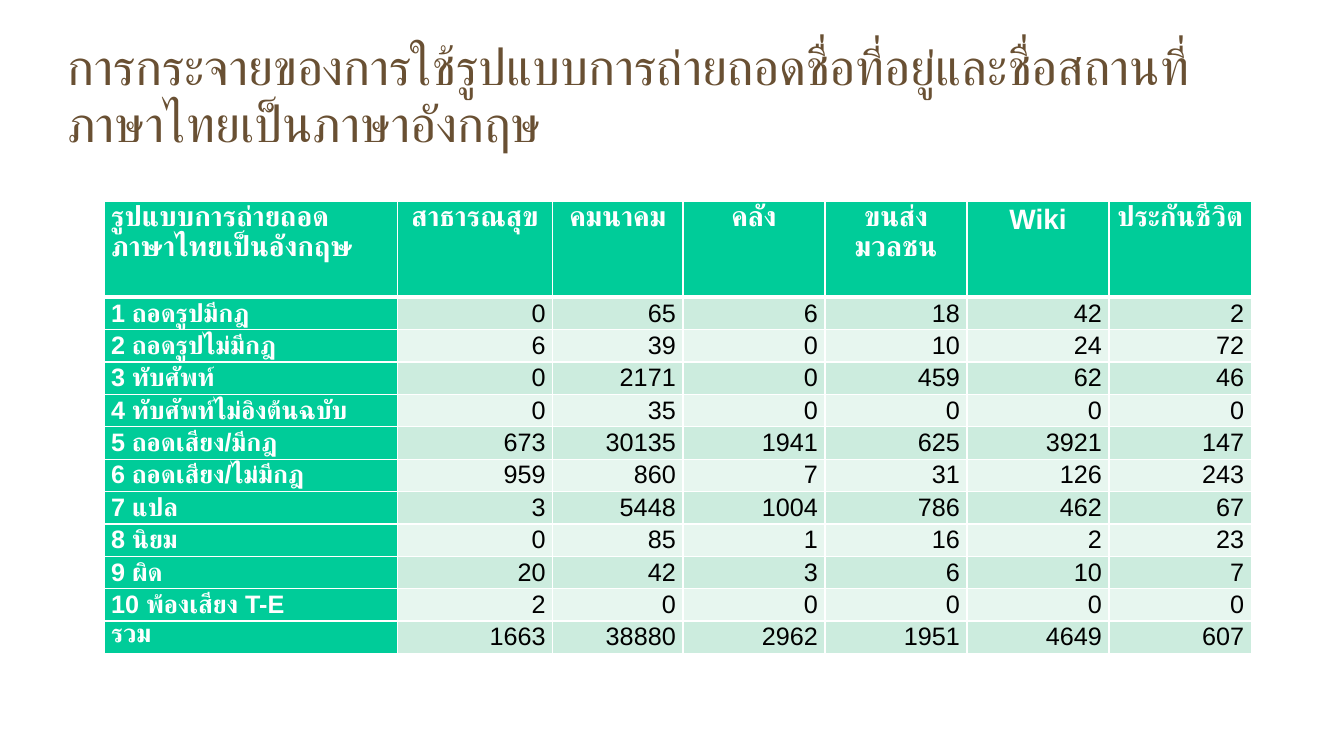
import pptx
import pptx.util
import pptx.dml.color
import pptx.enum.text
import pptx.oxml
import pptx.oxml.ns

Cm, Pt = pptx.util.Cm, pptx.util.Pt
Align = pptx.enum.text.PP_ALIGN
Anchor = pptx.enum.text.MSO_ANCHOR

# Content
TITLE = "การกระจายของการใช้รูปแบบการถ่ายถอดชื่อที่อยู่และชื่อสถานที่ภาษาไทยเป็นภาษาอังกฤษ"
HEAD = ("รูปแบบการถ่ายถอดภาษาไทยเป็นอังกฤษ", "สาธารณสุข", "คมนาคม", "คลัง",
        "ขนส่งมวลชน", "Wiki", "ประกันชีวิต")
ROWS = [
    ("1 ถอดรูปมีกฎ", 0, 65, 6, 18, 42, 2),
    ("2 ถอดรูปไม่มีกฎ", 6, 39, 0, 10, 24, 72),
    ("3 ทับศัพท์", 0, 2171, 0, 459, 62, 46),
    ("4 ทับศัพท์ไม่อิงต้นฉบับ", 0, 35, 0, 0, 0, 0),
    ("5 ถอดเสียง/มีกฎ", 673, 30135, 1941, 625, 3921, 147),
    ("6 ถอดเสียง/ไม่มีกฎ", 959, 860, 7, 31, 126, 243),
    ("7 แปล", 3, 5448, 1004, 786, 462, 67),
    ("8 นิยม", 0, 85, 1, 16, 2, 23),
    ("9 ผิด", 20, 42, 3, 6, 10, 7),
    ("10 พ้องเสียง T-E", 2, 0, 0, 0, 0, 0),
    ("รวม", 1663, 38880, 2962, 1951, 4649, 607),
]
WIDTHS = (7.39, 3.92, 3.28, 3.58, 3.58, 3.58, 3.58)
HEAD_H, ROW_H = 2.41, 0.61

THEME = dict(font="Arial", title="695033", green="00CC99", white="FFFFFF",
             black="000000", bands=("CCECDE", "E7F6EF"),
             title_pt=36, head_pt=20, body_pt=18, thin=1, thick=3)


def color(code):
    return pptx.dml.color.RGBColor.from_string(code)


def write(frame, text, size, ink, bold=False, align=Align.LEFT, lead=1.07):
    para = frame.paragraphs[0]
    para.alignment = align
    para.line_spacing = lead
    run = para.add_run()
    run.text = text
    font = run.font
    font.name, font.size, font.bold = THEME["font"], Pt(size), bold
    font.color.rgb = color(ink)


def edge(cell, side, width):
    props = cell._tc.get_or_add_tcPr()
    props.append(pptx.oxml.parse_xml(
        f'<a:ln{side} {pptx.oxml.ns.nsdecls("a")} w="{Pt(width)}"><a:solidFill>'
        f'<a:srgbClr val="{THEME["white"]}"/></a:solidFill></a:ln{side}>'))


def style(cell, row, col):
    cell.margin_left = cell.margin_right = Cm(0.18)
    cell.margin_top = cell.margin_bottom = 0
    heavy = {0: "B", 1: "T"}.get(row)
    for side in "LRTB":
        edge(cell, side, THEME["thick" if side == heavy else "thin"])
    label = row == 0 or col == 0
    cell.fill.solid()
    cell.fill.fore_color.rgb = color(
        THEME["green"] if label else THEME["bands"][(row - 1) % 2])
    align = Align.LEFT if col == 0 else Align.CENTER if row == 0 else Align.RIGHT
    return dict(size=THEME["body_pt" if row else "head_pt"], bold=label,
                ink=THEME["white" if label else "black"], align=align)


def main():
    deck = pptx.Presentation()
    deck.slide_width, deck.slide_height = Cm(33.87), Cm(19.05)
    slide = deck.slides.add_slide(deck.slide_layouts[6])

    # Title
    box = slide.shapes.add_textbox(Cm(1.7), Cm(0.86), Cm(29.85), Cm(3.18))
    frame = box.text_frame
    frame.word_wrap = True
    frame.vertical_anchor = Anchor.MIDDLE
    frame.margin_left = frame.margin_right = 0
    frame.margin_top = frame.margin_bottom = 0
    write(frame, TITLE, THEME["title_pt"], THEME["title"], lead=0.93)

    # Table
    lines = [HEAD] + ROWS
    holder = slide.shapes.add_table(len(lines), len(HEAD), Cm(2.62), Cm(5.08),
                                    Cm(sum(WIDTHS)), Cm(11.38))
    table = holder.table
    table.first_col = True
    for col, width in zip(table.columns, WIDTHS):
        col.width = Cm(width)
    for r, line in enumerate(lines):
        table.rows[r].height = Cm(ROW_H if r else HEAD_H)
        for c, value in enumerate(line):
            cell = table.cell(r, c)
            write(cell.text_frame, str(value), **style(cell, r, c))
    holder.height = Cm(11.38)

    deck.save("out.pptx")


if __name__ == "__main__":
    main()
